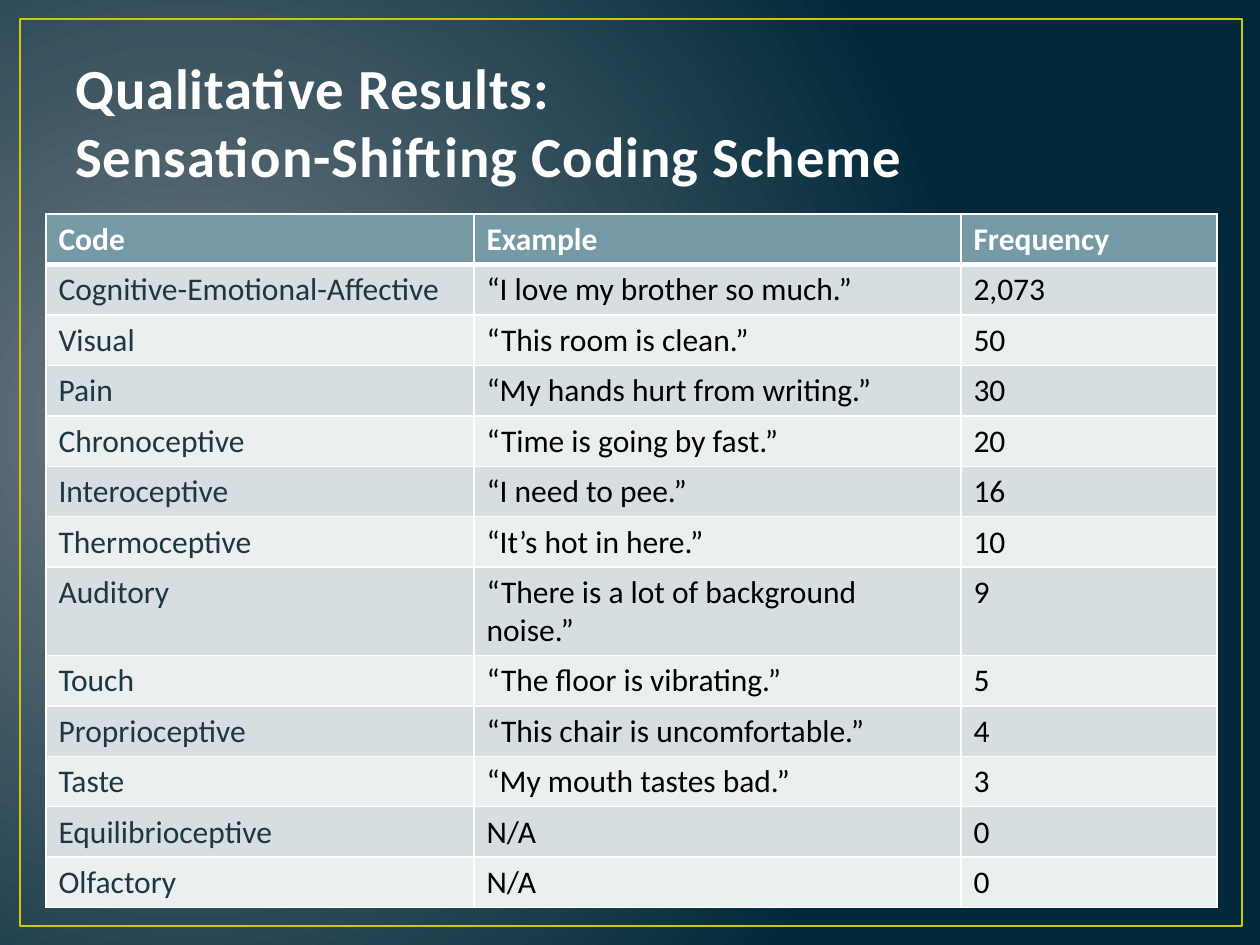
from lxml.etree import SubElement
from pptx import Presentation
from pptx.dml.color import RGBColor
from pptx.enum.shapes import MSO_SHAPE
from pptx.enum.text import MSO_ANCHOR
from pptx.oxml.ns import qn
from pptx.util import Emu, Pt

EMU_PER_PX = 914400 / 126
FONT = "Calibri"
COLUMN_WIDTHS = (428, 487, 256)
ROW_HEIGHT = 50
HEADER_FILL = "759AA5"
BAND_FILLS = ("D6DEE1", "ECEFF0")
CODE_COLOR = "1D3641"
CODING_SCHEME = (
    ("Code", "Example", "Frequency"),
    ("Cognitive-Emotional-Affective", "“I love my brother so much.”", "2,073"),
    ("Visual", "“This room is clean.”", "50"),
    ("Pain", "“My hands hurt from writing.”", "30"),
    ("Chronoceptive", "“Time is going by fast.”", "20"),
    ("Interoceptive", "“I need to pee.”", "16"),
    ("Thermoceptive", "“It’s hot in here.”", "10"),
    ("Auditory", "“There is a lot of background noise.”", "9"),
    ("Touch", "“The floor is vibrating.”", "5"),
    ("Proprioceptive", "“This chair is uncomfortable.”", "4"),
    ("Taste", "“My mouth tastes bad.”", "3"),
    ("Equilibrioceptive", "N/A", "0"),
    ("Olfactory", "N/A", "0"),
)


def px(length):
    return Emu(round(length * EMU_PER_PX))


def place(box):
    return [px(length) for length in box]


def color(hex_string):
    return RGBColor.from_string(hex_string)


def style_paragraph(para, size, hex_string, bold):
    para.font.name = FONT
    para.font.size = Pt(size)
    para.font.bold = bold
    para.font.color.rgb = color(hex_string)


def paint_background(page):
    fill = page.background.fill
    fill.gradient()
    for stop, hex_string in zip(fill.gradient_stops, ("717C84", "01293A")):
        stop.color.rgb = color(hex_string)
    linear = page.element.find(".//" + qn("a:lin"))
    gradient = linear.getparent()
    gradient.remove(linear)
    radial = SubElement(gradient, qn("a:path"), {"path": "circle"})
    SubElement(radial, qn("a:fillToRect"), l="15000", t="50000", r="85000", b="60000")


def add_frame(page, box):
    frame = page.shapes.add_shape(MSO_SHAPE.RECTANGLE, *place(box))
    frame.shadow.inherit = False
    frame.fill.background()
    frame.line.color.rgb = color("CFC60D")
    frame.line.width = Pt(1.5)


def add_title(page, box, text):
    title = page.shapes.add_textbox(*place(box)).text_frame
    title.word_wrap = True
    title.vertical_anchor = MSO_ANCHOR.BOTTOM
    para = title.paragraphs[0]
    para.text = text
    style_paragraph(para, 32.4, "FEFEFE", True)
    for span in para.runs:
        span.font._element.set("spc", "50")


def add_border(cell, side, width):
    properties = cell._tc.get_or_add_tcPr()
    line = SubElement(properties, qn(f"a:ln{side}"), w=str(Pt(width)))
    SubElement(SubElement(line, qn("a:solidFill")), qn("a:srgbClr"), val="FFFFFF")


def fill_cell(cell, text, row, column):
    header = row == 0
    widths = {"L": 1, "R": 1, "T": 3 if row == 1 else 1, "B": 3 if header else 1}
    for side, width in widths.items():
        add_border(cell, side, width)
    cell.fill.solid()
    cell.fill.fore_color.rgb = color(HEADER_FILL if header else BAND_FILLS[(row - 1) % 2])
    cell.text = text
    body_color = CODE_COLOR if column == 0 else "000000"
    style_paragraph(cell.text_frame.paragraphs[0], 18, "FFFFFF" if header else body_color, header)


def add_coding_table(page, left, top):
    box = (left, top, sum(COLUMN_WIDTHS), ROW_HEIGHT * len(CODING_SCHEME))
    table = page.shapes.add_table(len(CODING_SCHEME), len(COLUMN_WIDTHS), *place(box)).table
    for column, width in zip(table.columns, COLUMN_WIDTHS):
        column.width = px(width)
    for row, texts in enumerate(CODING_SCHEME):
        for column, text in enumerate(texts):
            fill_cell(table.cell(row, column), text, row, column)


def main():
    deck = Presentation()
    deck.slide_width, deck.slide_height = px(1260), px(945)
    page = deck.slides.add_slide(deck.slide_layouts[6])
    paint_background(page)
    add_frame(page, (20, 19, 1222, 907))
    add_title(page, (63, 38, 1134, 157), "Qualitative Results:\vSensation-Shifting Coding Scheme")
    add_coding_table(page, 46, 214)
    deck.save("out.pptx")


if __name__ == "__main__":
    main()
